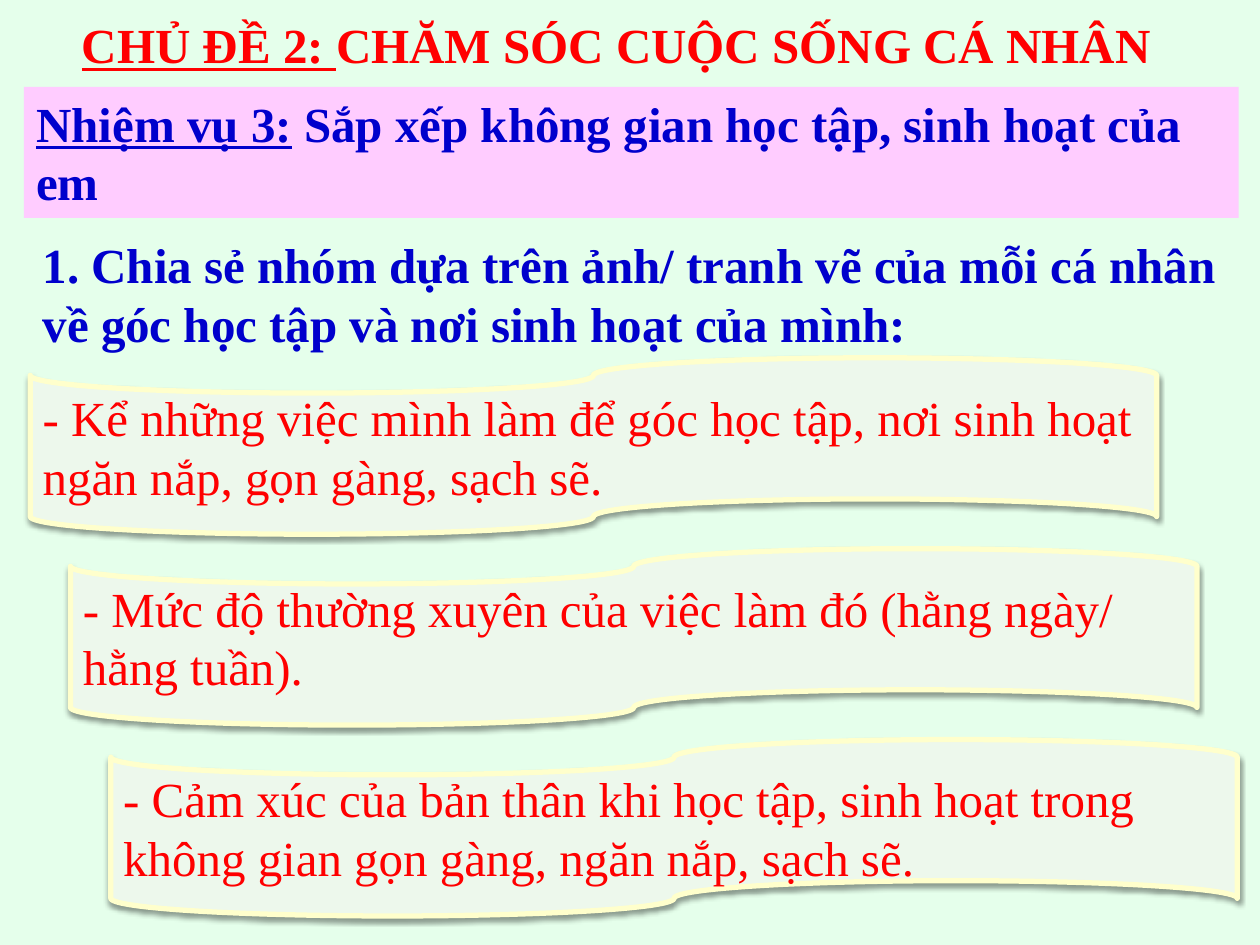
from dataclasses import dataclass

import lxml.etree
import pptx
import pptx.dml.color
import pptx.enum.shapes
import pptx.enum.text
import pptx.oxml
import pptx.oxml.ns
import pptx.util

Inches = pptx.util.Inches
Pt = pptx.util.Pt
Color = pptx.dml.color.RGBColor
Shapes = pptx.enum.shapes.MSO_SHAPE
Align = pptx.enum.text.PP_ALIGN
Anchor = pptx.enum.text.MSO_ANCHOR


@dataclass(frozen=True)
class Theme:
    font: str = "Times New Roman"
    size: float = 28
    border: float = 3
    background: Color = Color(0xE5, 0xFF, 0xEB)
    red: Color = Color(0xFF, 0x00, 0x00)
    blue: Color = Color(0x00, 0x00, 0xCC)
    banner: Color = Color(0xFF, 0xCC, 0xFF)
    tape: Color = Color(0xED, 0xF8, 0xEC)
    tape_border: Color = Color(0xFF, 0xFF, 0xCC)


@dataclass(frozen=True)
class Box:
    left: float
    top: float
    width: float
    height: float

    def lengths(self) -> tuple:
        return tuple(Inches(n) for n in (self.left, self.top, self.width, self.height))


@dataclass(frozen=True)
class Heading:
    box: Box
    label: str
    text: str
    color: Color
    fill: Color | None = None
    align: Align = Align.LEFT


THEME = Theme()

HEADINGS = [
    Heading(Box(0.35, 0.07, 9.08, 0.57), "CHỦ ĐỀ 2: ", "CHĂM SÓC CUỘC SỐNG CÁ NHÂN",
            THEME.red, align=Align.CENTER),
    Heading(Box(0.19, 0.69, 9.64, 1.04), "Nhiệm vụ 3:",
            " Sắp xếp không gian học tập, sinh hoạt của em", THEME.blue, THEME.banner),
    Heading(Box(0.24, 1.81, 9.59, 1.04), "",
            "1. Chia sẻ nhóm dựa trên ảnh/ tranh vẽ của mỗi cá nhân về góc học tập "
            "và nơi sinh hoạt của mình:", THEME.blue),
]

SHARING_POINTS = [
    "- Kể những việc mình làm để góc học tập, nơi sinh hoạt ngăn nắp, gọn gàng, sạch sẽ.",
    "- Mức độ thường xuyên của việc làm đó (hằng ngày/ hằng tuần).",
    "- Cảm xúc của bản thân khi học tập, sinh hoạt trong không gian gọn gàng, "
    "ngăn nắp, sạch sẽ.",
]
FIRST_TAPE = Box(0.24, 2.84, 8.94, 1.4)
STEP_RIGHT, STEP_DOWN = 0.32, 1.515


def add_run(paragraph, text: str, color: Color, bold: bool = False,
            underline: bool = False) -> None:
    run = paragraph.add_run()
    run.text = text
    font = run.font
    font.name, font.size = THEME.font, Pt(THEME.size)
    font.bold, font.underline = bold, underline
    font.color.rgb = color


def add_heading(slide, heading: Heading) -> None:
    place = heading.box.lengths()
    if heading.fill is None:
        block = slide.shapes.add_textbox(*place)
    else:
        block = slide.shapes.add_shape(Shapes.RECTANGLE, *place)
        block.shadow.inherit = False
        block.fill.solid()
        block.fill.fore_color.rgb = heading.fill
        block.line.fill.background()
    frame = block.text_frame
    frame.word_wrap = True
    frame.auto_size = pptx.enum.text.MSO_AUTO_SIZE.SHAPE_TO_FIT_TEXT
    frame.vertical_anchor = Anchor.TOP
    paragraph = frame.paragraphs[0]
    paragraph.alignment = heading.align
    if heading.label:
        add_run(paragraph, heading.label, heading.color, bold=True, underline=True)
    add_run(paragraph, heading.text, heading.color, bold=True)


def add_drop_shadow(shape) -> None:
    """Give the shape a soft black shadow straight below it."""
    shape.shadow.inherit = False
    effects = shape._element.spPr.find(pptx.oxml.ns.qn("a:effectLst"))
    shadow = lxml.etree.SubElement(
        effects, pptx.oxml.ns.qn("a:outerShdw"), blurRad=str(Pt(3.1)),
        dist=str(Pt(1.6)), dir="5400000", rotWithShape="0")
    black = lxml.etree.SubElement(shadow, pptx.oxml.ns.qn("a:srgbClr"), val="000000")
    lxml.etree.SubElement(black, pptx.oxml.ns.qn("a:alpha"), val="38000")


def add_tape(slide, box: Box, text: str) -> None:
    tape = slide.shapes.add_shape(Shapes.FLOWCHART_PUNCHED_TAPE, *box.lengths())
    tape.fill.solid()
    tape.fill.fore_color.rgb = THEME.tape
    tape.line.color.rgb = THEME.tape_border
    tape.line.width = Pt(THEME.border)
    add_drop_shadow(tape)
    frame = tape.text_frame
    frame.word_wrap = True
    frame.vertical_anchor = Anchor.MIDDLE
    paragraph = frame.paragraphs[0]
    paragraph.alignment = Align.LEFT
    add_run(paragraph, text, THEME.red)


def main() -> None:
    deck = pptx.Presentation()
    deck.slide_width, deck.slide_height = Inches(10), Inches(7.5)
    slide = deck.slides.add_slide(deck.slide_layouts[6])
    slide.background.fill.solid()
    slide.background.fill.fore_color.rgb = THEME.background
    for heading in HEADINGS:
        add_heading(slide, heading)
    for step, point in enumerate(SHARING_POINTS):
        box = Box(FIRST_TAPE.left + step * STEP_RIGHT, FIRST_TAPE.top + step * STEP_DOWN,
                  FIRST_TAPE.width, FIRST_TAPE.height)
        add_tape(slide, box, point)
    deck.save("out.pptx")


if __name__ == "__main__":
    main()
